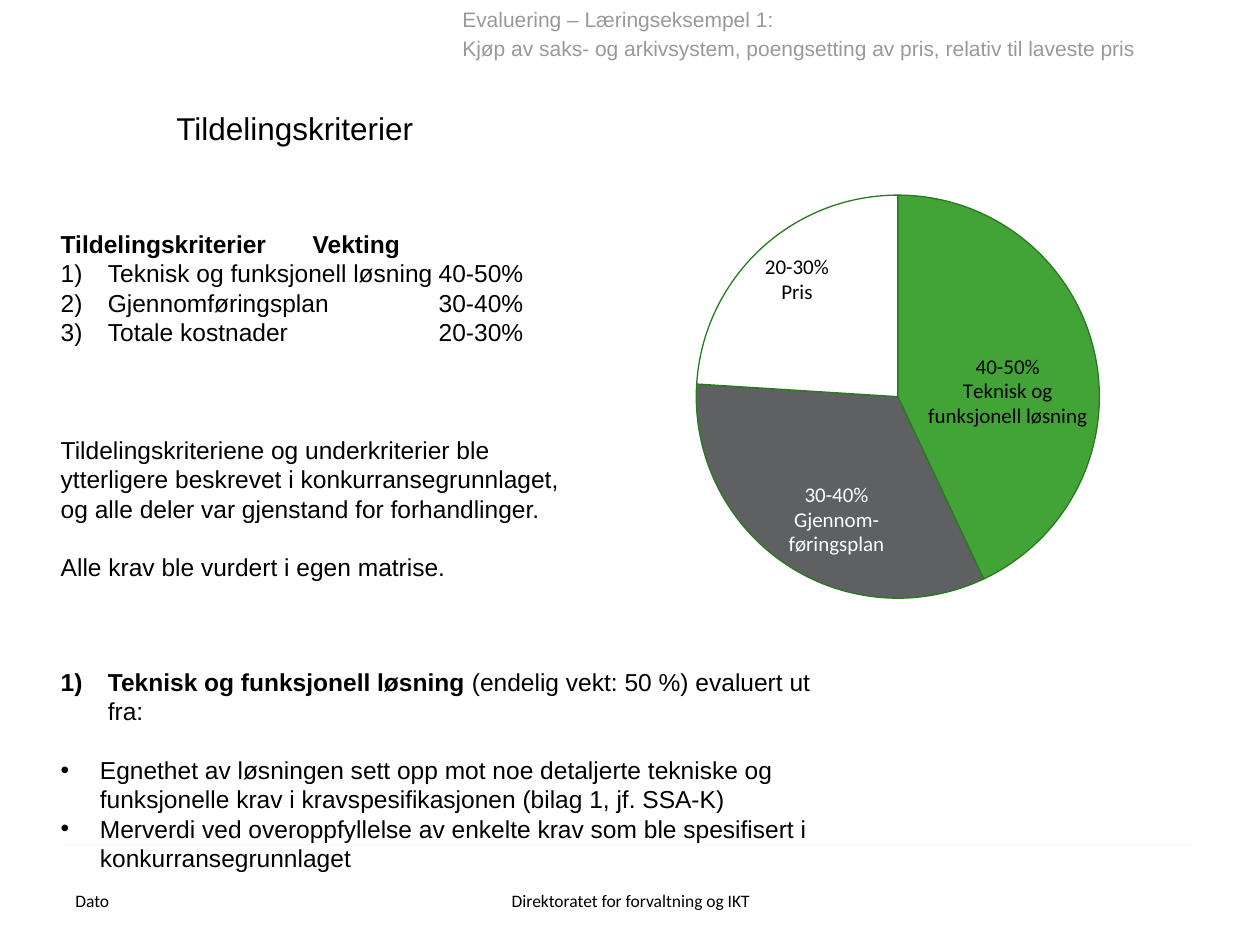
"""Build the slide on award criteria with their weighting and a pie chart."""
import pptx
import pptx.chart.data
import pptx.dml.color
import pptx.enum.chart
import pptx.enum.shapes
import pptx.enum.text
import pptx.oxml
import pptx.oxml.ns
import pptx.util
from pptx.util import Cm, Pt

BLACK = pptx.dml.color.RGBColor(0x00, 0x00, 0x00)
WHITE = pptx.dml.color.RGBColor(0xFF, 0xFF, 0xFF)
GREEN = pptx.dml.color.RGBColor(0x42, 0xA4, 0x37)
DARK_GREEN = pptx.dml.color.RGBColor(0x2A, 0x78, 0x22)
DARK_GREY = pptx.dml.color.RGBColor(0x5F, 0x60, 0x62)
HEADER_GREY = pptx.dml.color.RGBColor(0x98, 0x99, 0x9C)
RULE_GREY = pptx.dml.color.RGBColor(0xF9, 0xF9, 0xF9)

NUMBER = '<a:buAutoNum {} type="arabicParenR"/>'
BULLET = '<a:buChar {} char="•"/>'
PLAIN = '<a:buNone {}/>'
NUMBER_INDENT = Cm(0.95)
BULLET_INDENT = Cm(0.79)
WEIGHT_TAB = Cm(7.62)
BLANK_LINE = 16.8

CRITERIA = [
    ("Teknisk og funksjonell løsning", "40-50%"),
    ("Gjennomføringsplan", "30-40%"),
    ("Totale kostnader", "20-30%"),
]
SLICES = [
    (43, GREEN, BLACK, "40-50%\nTeknisk og funksjonell løsning"),
    (33, DARK_GREY, WHITE, "30-40%\nGjennom-føringsplan"),
    (24, WHITE, BLACK, "20-30%\nPris"),
]


def format_font(font, size, color=BLACK, name="Arial", bold=False):
    """Set the look of a font."""
    font.size, font.name, font.bold = Pt(size), name, bold
    font.color.rgb = color


def add_element(parent, template):
    """Append a drawing element written as XML."""
    namespace = pptx.oxml.ns.nsdecls("a")
    parent.append(pptx.oxml.parse_xml(template.format(namespace)))


def place(shape, left, top, width, height):
    """Move a shape and fix its text area."""
    shape.left, shape.top, shape.width, shape.height = map(Cm, (left, top, width, height))
    frame = shape.text_frame
    frame.word_wrap = True
    frame.auto_size = pptx.enum.text.MSO_AUTO_SIZE.NONE
    frame.vertical_anchor = pptx.enum.text.MSO_ANCHOR.TOP
    return frame


def fill_list(frame, entries):
    """Write entries of text, marker, indent, gap before and bold length."""
    frame.text = "\n".join(entry[0] for entry in entries)
    for paragraph, (text, marker, indent, gap, bold_length) in zip(frame.paragraphs, entries):
        properties = paragraph._p.get_or_add_pPr()
        properties.set("marL", str(indent))
        properties.set("indent", str(-indent))
        add_element(properties, marker)
        if "\t" in text:
            add_element(properties, '<a:tabLst {}><a:tab pos="%d" algn="l"/></a:tabLst>' % WEIGHT_TAB)
        paragraph.line_spacing = 1.0
        paragraph.space_before = Pt(gap)
        run = paragraph.runs[0]
        if 0 < bold_length < len(text):
            run.text = text[:bold_length]
            paragraph.add_run().text = text[bold_length:]
        for part in paragraph.runs:
            format_font(part.font, 14)
        run.font.bold = bold_length > 0


def add_caption(slide, box, text, size, color=BLACK, name="Arial", gap=0, alignment=None):
    """Add a text box in one style and return its frame."""
    frame = place(slide.shapes.add_textbox(0, 0, 0, 0), *box)
    frame.text = text
    for index, paragraph in enumerate(frame.paragraphs):
        paragraph.alignment = alignment
        paragraph.space_before = Pt(gap if index else 0)
        format_font(paragraph.runs[0].font, size, color, name)
    return frame


def add_footer(slide):
    """Add the footer rule, date and owner."""
    rule = slide.shapes.add_connector(
        pptx.enum.shapes.MSO_CONNECTOR.STRAIGHT, Cm(1.27), Cm(17.02), Cm(24.13), Cm(17.02))
    rule.line.color.rgb = RULE_GREY
    rule.line.width = Pt(0.75)
    add_element(rule._element.spPr, "<a:effectLst {}/>")
    center = pptx.enum.text.PP_ALIGN.CENTER
    for box, text, alignment in (
        ((1.27, 17.65, 5.92, 1.02), "Dato", None),
        ((8.69, 17.65, 8.05, 1.02), "Direktoratet for forvaltning og IKT", center),
    ):
        frame = add_caption(slide, box, text, 10, name="Calibri", alignment=alignment)
        frame.vertical_anchor = pptx.enum.text.MSO_ANCHOR.MIDDLE


def add_weight_chart(slide):
    """Add the pie chart of weights."""
    data = pptx.chart.data.CategoryChartData()
    data.categories = [str(number) for number in range(1, len(SLICES) + 1)]
    data.add_series("Series 1", [entry[0] for entry in SLICES])
    chart = slide.shapes.add_chart(
        pptx.enum.chart.XL_CHART_TYPE.PIE, Cm(12.09), Cm(3.02), Cm(12.14), Cm(10.16), data).chart
    chart.has_title = False
    chart.has_legend = False
    format_font(chart.font, 18, name="Calibri")
    plot = chart.plots[0]
    plot.vary_by_categories = True
    series = plot.series[0]
    for index, (_, fill, text_color, text) in enumerate(SLICES):
        point = series.points[index]
        point.format.fill.solid()
        point.format.fill.fore_color.rgb = fill
        point.format.line.color.rgb = DARK_GREEN
        point.format.line.width = Pt(0.75)
        label = point.data_label
        label.text_frame.text = text
        for paragraph in label.text_frame.paragraphs:
            format_font(paragraph.runs[0].font, 12, text_color, "Calibri")
        label.position = pptx.enum.chart.XL_LABEL_POSITION.INSIDE_END
    plot_area = chart._chartSpace.chart.plotArea
    for old in plot_area.findall(pptx.oxml.ns.qn("c:layout")):
        plot_area.remove(old)
    sizes = "".join(f'<c:{key} val="{value}"/>' for key, value in (
        ("layoutTarget", "inner"), ("xMode", "edge"), ("yMode", "edge"),
        ("x", 0.09), ("y", 0.09), ("w", 0.81), ("h", 0.8)))
    plot_area.insert(0, pptx.oxml.parse_xml(
        f'<c:layout {pptx.oxml.ns.nsdecls("c")}><c:manualLayout>{sizes}</c:manualLayout></c:layout>'))


def main():
    """Assemble and save the slide."""
    deck = pptx.Presentation()
    deck.slide_width, deck.slide_height = Cm(25.4), Cm(19.05)
    slide = deck.slides.add_slide(deck.slide_layouts[3])
    heading, criteria, evaluation = list(slide.placeholders)[:3]

    add_footer(slide)
    add_caption(
        slide, (9.07, 0, 16.33, 1.96),
        "Evaluering – Læringseksempel 1:\n"
        "Kjøp av saks- og arkivsystem, poengsetting av pris, relativ til laveste pris",
        12, HEADER_GREY, gap=2.4)

    heading_frame = place(heading, 3.3, 2.08, 8.28, 1.02)
    heading_frame.text = "Tildelingskriterier"
    heading_frame.paragraphs[0].alignment = pptx.enum.text.PP_ALIGN.LEFT
    format_font(heading_frame.paragraphs[0].runs[0].font, 18)

    title_row = "Tildelingskriterier\tVekting"
    criteria_frame = place(criteria, 0.97, 4.19, 11.13, 8.94)
    fill_list(criteria_frame, [
        (title_row, PLAIN, 0, 0, len(title_row)),
        *((f"{name}\t{weight}", NUMBER, NUMBER_INDENT, 0, 0) for name, weight in CRITERIA),
        ("Tildelingskriteriene og underkriterier ble ytterligere beskrevet i "
         "konkurransegrunnlaget, og alle deler var gjenstand for forhandlinger.",
         PLAIN, 0, 3 * BLANK_LINE, 0),
        ("Alle krav ble vurdert i egen matrise.", PLAIN, 0, BLANK_LINE, 0),
    ])
    criteria_frame.paragraphs[0].line_spacing = 1.5

    main_criterion = CRITERIA[0][0]
    fill_list(place(evaluation, 0.97, 13.31, 16.41, 5.64), [
        (main_criterion + " (endelig vekt: 50 %) evaluert ut fra:",
         NUMBER, NUMBER_INDENT, 0, len(main_criterion)),
        ("Egnethet av løsningen sett opp mot noe detaljerte tekniske og funksjonelle "
         "krav i kravspesifikasjonen (bilag 1, jf. SSA-K)",
         BULLET, BULLET_INDENT, BLANK_LINE, 0),
        ("Merverdi ved overoppfyllelse av enkelte krav som ble spesifisert i "
         "konkurransegrunnlaget", BULLET, BULLET_INDENT, 0, 0),
    ])

    add_weight_chart(slide)
    deck.save("out.pptx")


if __name__ == "__main__":
    main()
